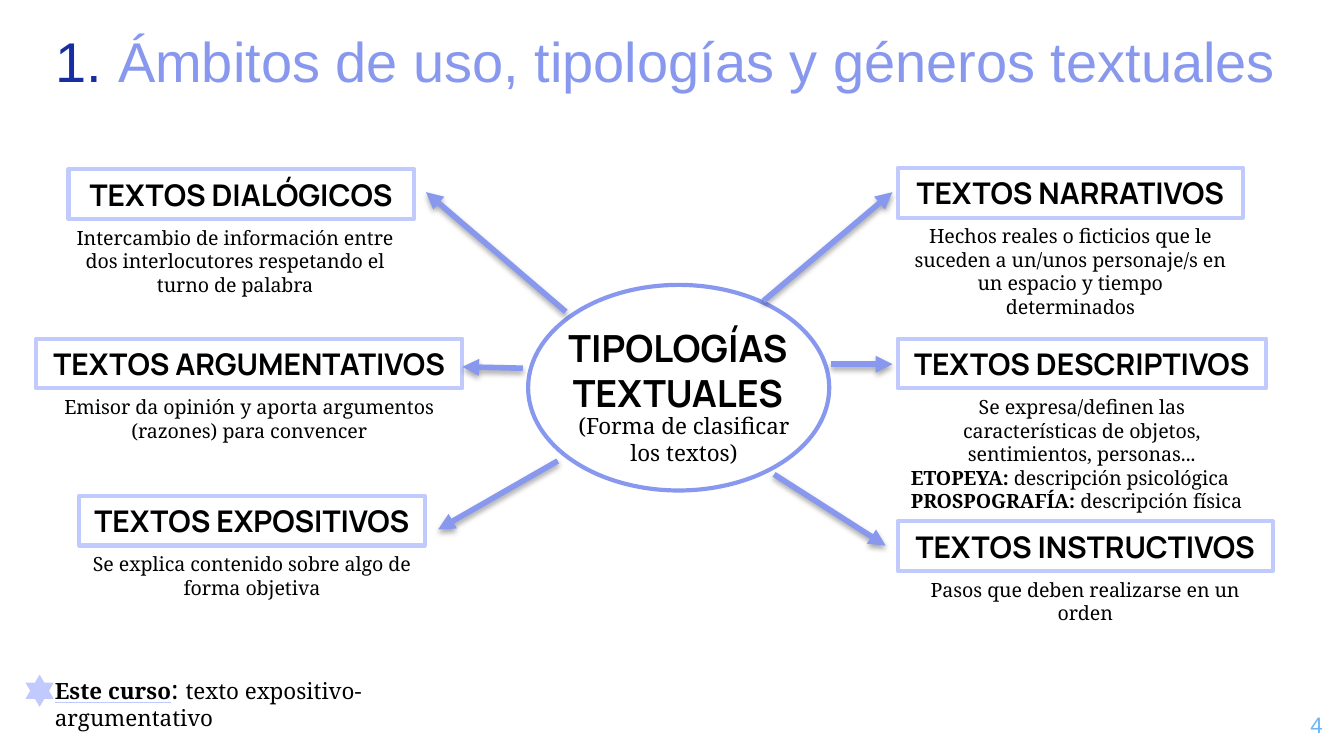
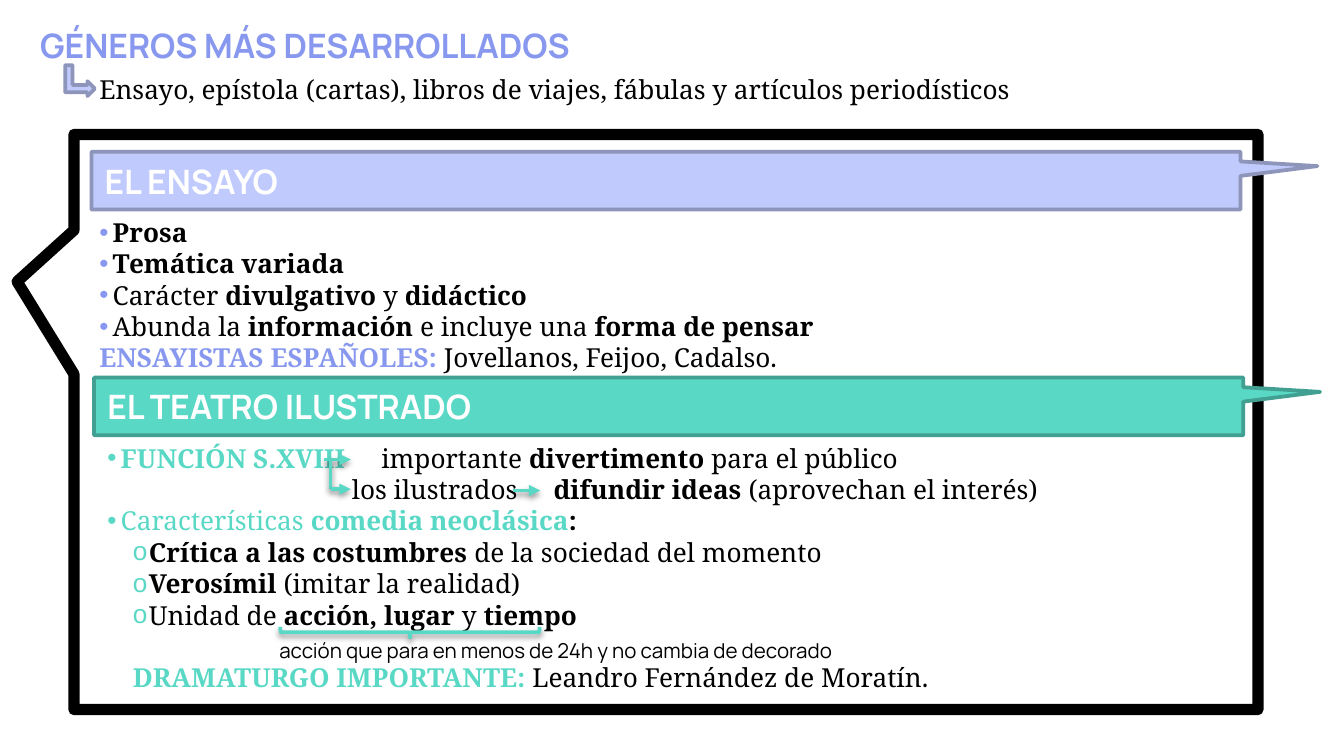
from dataclasses import dataclass

from lxml.etree import SubElement
from pptx import Presentation
from pptx.dml.color import RGBColor
from pptx.enum.shapes import MSO_CONNECTOR as Connector, MSO_SHAPE as Shape
from pptx.enum.text import MSO_ANCHOR as Anchor, PP_ALIGN as Align
from pptx.oxml.ns import qn
from pptx.util import Inches, Pt

COLUMNS, ROWS = 100, 56.25
UNIT = Inches(10) / COLUMNS

BLACK, WHITE = "000000", "FFFFFF"
NAVY, BLUE, SKY = "172EA3", "8798EE", "6DB4F5"
LAVENDER, LAVENDER_EDGE = "C0CAFC", "8E95BA"
TEAL, TEAL_EDGE = "58D8C5", "41A092"
SANS, HEADING, BODY = "Arial", "Manrope", "Noto Serif"
ARROW_GAP = "~"
ARROW_GAP_SPACING = 1560  # hundredths of a point


@dataclass
class Box:
    """Area on the slide, in columns and rows of the grid."""
    left: float
    top: float
    width: float
    height: float

    def inner(self, left, top, width, height):
        return Box(self.left + left, self.top + top, width, height)

    def emu(self):
        return [grid(v) for v in (self.left, self.top, self.width, self.height)]


def grid(units):
    return round(units * UNIT)


def rgb(color):
    return RGBColor.from_string(color)


def xml_child(parent, tag, **attributes):
    return SubElement(parent, qn(tag), {k: str(v) for k, v in attributes.items()})


def xml_color(parent, tag, color):
    return xml_child(xml_child(parent, tag), "a:srgbClr", val=color)


def set_font(font, face, size, color=BLACK, bold=False):
    font.name, font.size, font.bold = face, Pt(size), bold
    font.color.rgb = rgb(color)


def add_runs(paragraph, markup, color=None):
    """Add text in which *stars* enclose bold parts and *~* is room for an arrow."""
    for index, part in enumerate(markup.split("*")):
        if not part:
            continue
        run = paragraph.add_run()
        if part == ARROW_GAP:
            run.text = " "
            run.font._element.set("spc", str(ARROW_GAP_SPACING))
            continue
        run.text = part
        if index % 2:
            run.font.bold = True
        if color:
            run.font.color.rgb = rgb(color)


def set_indent(paragraph, left, bullet=None, color=BLACK, hanging=0.0):
    props = paragraph._p.get_or_add_pPr()
    props.set("marL", str(grid(left)))
    props.set("indent", str(-grid(hanging)))
    if bullet:
        xml_color(props, "a:buClr", color)
        xml_child(props, "a:buFont", typeface=SANS)
        xml_child(props, "a:buChar", char=bullet)


def add_text_area(slide, box, inset=0.5):
    frame = slide.shapes.add_textbox(*box.emu()).text_frame
    frame.word_wrap = True
    frame.margin_top = frame.margin_bottom = grid(inset)
    return frame


def add_line_of_text(slide, box, text, face, size, color=BLACK, bold=False,
                     align=Align.LEFT, inset=0.5):
    paragraph = add_text_area(slide, box, inset).paragraphs[0]
    paragraph.alignment = align
    add_runs(paragraph, text)
    set_font(paragraph.font, face, size, color, bold)
    return paragraph


def add_figure(slide, preset, box, fill=None, edge=None, weight=2.25):
    figure = slide.shapes.add_shape(preset, *box.emu())
    figure.shadow.inherit = False
    if fill:
        figure.fill.solid()
        figure.fill.fore_color.rgb = rgb(fill)
    else:
        figure.fill.background()
    if edge:
        figure.line.color.rgb = rgb(edge)
        figure.line.width = Pt(weight)
    else:
        figure.line.fill.background()
    return figure


def add_shadow(figure, opacity):
    props = figure._element.spPr
    effects = props.find(qn("a:effectLst"))
    if effects is None:
        effects = xml_child(props, "a:effectLst")
    shadow = xml_child(effects, "a:outerShdw", blurRad=Pt(3.1), dist=Pt(1.7),
                       dir=90 * 60000, rotWithShape=0)
    black = xml_child(shadow, "a:srgbClr", val=BLACK)
    xml_child(black, "a:alpha", val=opacity * 1000)


def add_link(slide, start, end, color, weight, opacity, arrow=True):
    ends = [grid(v) for v in (*start, *end)]
    link = slide.shapes.add_connector(Connector.STRAIGHT, *ends)
    link.line.color.rgb = rgb(color)
    link.line.width = Pt(weight)
    if arrow:
        xml_child(link.line._get_or_add_ln(), "a:tailEnd", type="triangle")
    add_shadow(link, opacity)


# Slide 1: map of the text types

TEXT_TYPES = [
    (Box(5.1, 12.6, 25.7, 10), "TEXTOS DIALÓGICOS", 0.9,
     ["Intercambio de información entre dos interlocutores respetando el turno de palabra"]),
    (Box(2.7, 25.2, 31.7, 8.2), "TEXTOS ARGUMENTATIVOS", 0,
     ["Emisor da opinión y aporta argumentos (razones) para convencer"]),
    (Box(5.9, 36.9, 25.7, 8.2), "TEXTOS EXPOSITIVOS", 0,
     ["Se explica contenido sobre algo de forma objetiva"]),
    (Box(66.8, 12.5, 25.7, 10), "TEXTOS NARRATIVOS", 0,
     ["Hechos reales o ficticios que le suceden a un/unos personaje/s en un espacio "
      "y tiempo determinados"]),
    (Box(66.8, 25.2, 27.4, 11.8), "TEXTOS DESCRIPTIVOS", 0,
     ["Se expresa/definen las características de objetos, sentimientos, personas...",
      "*ETOPEYA:* descripción psicológica", "*PROSPOGRAFÍA:* descripción física"]),
    (Box(66.8, 38.8, 27.9, 8.2), "TEXTOS INSTRUCTIVOS", 0,
     ["Pasos que deben realizarse en un orden"]),
]

TYPE_ARROWS = [
    ((42.1, 23.2), (31.7, 14.3)), ((41.5, 34.3), (32.6, 39.4)),
    ((38.9, 27.4), (34.4, 27.3)), ((61.8, 27.1), (66.4, 27.1)),
    ((56.8, 22.4), (66.4, 14.3)), ((57.6, 35.3), (65.9, 40.6)),
]


def text_type_card(slide, box, heading, overhang, definition):
    """Framed heading with its definition, which may hang over on the left."""
    frame_height = 3.7
    frame = add_figure(slide, Shape.RECTANGLE, box.inner(0, 0, box.width, frame_height),
                       edge=LAVENDER).text_frame
    frame.vertical_anchor = Anchor.MIDDLE
    frame.word_wrap = False
    title = frame.paragraphs[0]
    title.alignment = Align.CENTER
    add_runs(title, heading)
    set_font(title.font, HEADING, 16, bold=True)

    area = add_text_area(slide, box.inner(-overhang, frame_height, box.width + overhang,
                                          box.height - frame_height))
    for index, sentence in enumerate(definition):
        paragraph = area.add_paragraph() if index else area.paragraphs[0]
        paragraph.alignment = Align.LEFT if index else Align.CENTER
        add_runs(paragraph, sentence)
        set_font(paragraph.font, BODY, 10.5)


def central_topic(slide, box):
    add_figure(slide, Shape.OVAL, box, edge=BLUE)
    add_line_of_text(slide, box.inner(-1, 2.5, 24.3, 7.7), "TIPOLOGÍAS TEXTUALES",
                     HEADING, 20, bold=True, align=Align.CENTER)
    add_line_of_text(slide, box.inner(2.3, 9, 18.6, 5), "(Forma de clasificar los textos)",
                     BODY, 12, align=Align.CENTER)


def course_note(slide, box):
    add_figure(slide, Shape.STAR_6_POINT, box.inner(0, 0.6, 2.1, 2.4), fill=LAVENDER)
    note = add_line_of_text(slide, box.inner(1.2, 0, box.width - 1.2, box.height),
                            "*Este curso*", BODY, 12)
    course = note.runs[0]
    course.font.underline = True
    xml_color(xml_child(course.font._element, "a:uFill"), "a:solidFill", LAVENDER)
    add_runs(note, ": ")
    note.runs[-1].font.size = Pt(14)
    add_runs(note, "texto expositivo-argumentativo")


def typology_slide(slide):
    title = add_line_of_text(slide, Box(1.9, 1, 95.3, 7.3), "1. ", SANS, 30, BLUE,
                             align=Align.CENTER, inset=1)
    title.runs[0].font.color.rgb = rgb(NAVY)
    add_runs(title, "Ámbitos de uso, tipologías y géneros textuales")
    central_topic(slide, Box(39.3, 21.2, 22.4, 15.3))
    for card in TEXT_TYPES:
        text_type_card(slide, *card)
    for start, end in TYPE_ARROWS:
        add_link(slide, start, end, BLUE, 3, 35)
    course_note(slide, Box(1.9, 49.6, 36.3, 5))
    add_line_of_text(slide, Box(93.4, 51.9, 6, 4.3), "4", SANS, 12, SKY,
                     align=Align.RIGHT, inset=1)


# Slide 2: essay and theatre. Each point: accent text, black text, indent options

BULLET = dict(left=1, hanging=1, bullet="•")
SUB_BULLET = dict(left=3.1, hanging=1.2, bullet="o")

ESSAY_POINTS = [
    ("", "*Prosa*", BULLET),
    ("", "*Temática variada*", BULLET),
    ("", "Carácter *divulgativo* y *didáctico*", BULLET),
    ("", "Abunda la *información* e incluye una *forma de pensar*", BULLET),
    ("*ENSAYISTAS ESPAÑOLES:* ", "Jovellanos, Feijoo, Cadalso.", dict(left=0)),
]

THEATRE_POINTS = [
    ("*FUNCIÓN S.XVIII*", "*~*importante *divertimento* para el público", BULLET),
    ("", "los ilustrados*~**difundir ideas* (aprovechan el interés)", dict(left=18.2)),
    ("Características *comedia neoclásica*", "*:*", BULLET),
    ("", "*Crítica a las costumbres* de la sociedad del momento", SUB_BULLET),
    ("", "*Verosímil* (imitar la realidad)", SUB_BULLET),
    ("", "Unidad de *acción, lugar* y *tiempo*", SUB_BULLET),
    ("*DRAMATURGO IMPORTANTE:* ", "Leandro Fernández de Moratín.", dict(left=1.9)),
]


def genre_section(slide, box, heading, accent, edge, points, text_shift=0.0):
    """Banner with a pointed callout and its points below; returns the paragraphs."""
    banner_height = 4.3
    banner = add_figure(slide, Shape.RECTANGULAR_CALLOUT,
                        box.inner(0, 0, box.width, banner_height), accent, edge, 2)
    banner.adjustments[0], banner.adjustments[1] = 0.567, -0.252
    banner.text_frame.vertical_anchor = Anchor.MIDDLE
    title = banner.text_frame.paragraphs[0]
    title.alignment = Align.LEFT
    add_runs(title, heading)
    set_font(title.font, HEADING, 18, WHITE, True)

    area = add_text_area(slide, box.inner(text_shift, banner_height, 77.5,
                                          box.height - banner_height))
    bullet_color = BLUE if accent == LAVENDER else accent
    for index, (lead, text, indent) in enumerate(points):
        paragraph = area.add_paragraph() if index else area.paragraphs[0]
        set_indent(paragraph, color=bullet_color, **indent)
        add_runs(paragraph, lead, bullet_color)
        add_runs(paragraph, text)
        set_font(paragraph.font, BODY, 14)
    return area.paragraphs


def theatre_marks(slide, box):
    """Arrows from the function of theatre, and the brace under the three unities."""
    fork, branch_end, first, second = 17.6, 19.1, 6.1, 8.3
    links = [((31.2, 8.4), (33.2, 8.4), True), ((17.1, first), (branch_end, first), True),
             ((fork, second), (fork, first), False), ((fork, second), (branch_end, second), True)]
    for (x1, y1), (x2, y2), arrow in links:
        add_link(slide, (box.left + x1, box.top + y1), (box.left + x2, box.top + y2),
                 TEAL, 2, 38, arrow)
    brace = add_figure(slide, Shape.RIGHT_BRACE, box.inner(23.1, 9.3, 0.8, 19.3),
                       edge=TEAL, weight=2)
    brace.rotation = 90
    add_shadow(brace, 38)
    add_line_of_text(slide, box.inner(12.8, 18.9, 44.3, 2.9),
                     "acción que para en menos de 24h y no cambia de decorado", HEADING, 11)


def genres_header(slide, box):
    add_line_of_text(slide, box.inner(0, 0, box.width, 4), "GÉNEROS MÁS DESARROLLADOS",
                     HEADING, 18, BLUE, True)
    add_line_of_text(slide, box.inner(4.4, 3.6, 77.5, 3.4),
                     "Ensayo, epístola (cartas), libros de viajes, fábulas y artículos periodísticos",
                     BODY, 14)
    arrow = add_figure(slide, Shape.BENT_UP_ARROW, box.inner(2.8, 3.5, 2.3, 2.2),
                       LAVENDER, LAVENDER_EDGE, 2)
    arrow.rotation = 90


def genres_slide(slide):
    genres_header(slide, Box(2, 1.4, 82, 7))
    panel = add_figure(slide, Shape.RECTANGULAR_CALLOUT, Box(5.5, 10, 88.1, 42.8),
                       edge=BLACK, weight=6)
    panel.adjustments[0], panel.adjustments[1] = -0.548, -0.244
    genre_section(slide, Box(6.8, 11.3, 85.5, 17.1), "EL ENSAYO", LAVENDER,
                  LAVENDER_EDGE, ESSAY_POINTS, text_shift=-0.4)
    theatre = Box(7, 28.1, 85.5, 24.2)
    points = genre_section(slide, theatre, "EL TEATRO ILUSTRADO", TEAL, TEAL_EDGE,
                           THEATRE_POINTS)
    points[-1].space_before = Pt(16.8)
    theatre_marks(slide, theatre)


def main():
    deck = Presentation()
    deck.slide_width, deck.slide_height = grid(COLUMNS), grid(ROWS)
    blank = deck.slide_layouts[6]
    for build in (typology_slide, genres_slide):
        build(deck.slides.add_slide(blank))
    deck.save("out.pptx")


if __name__ == "__main__":
    main()
